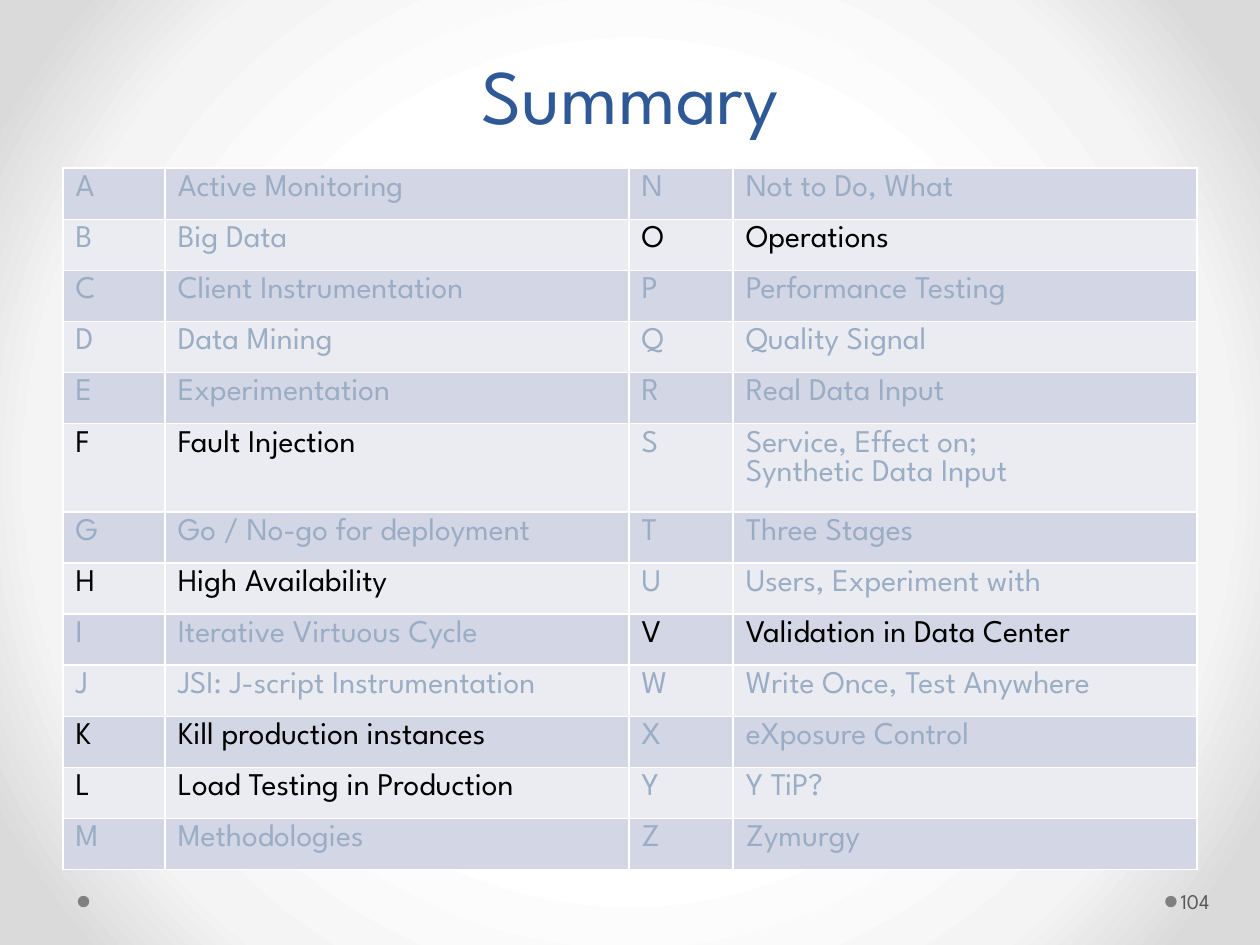
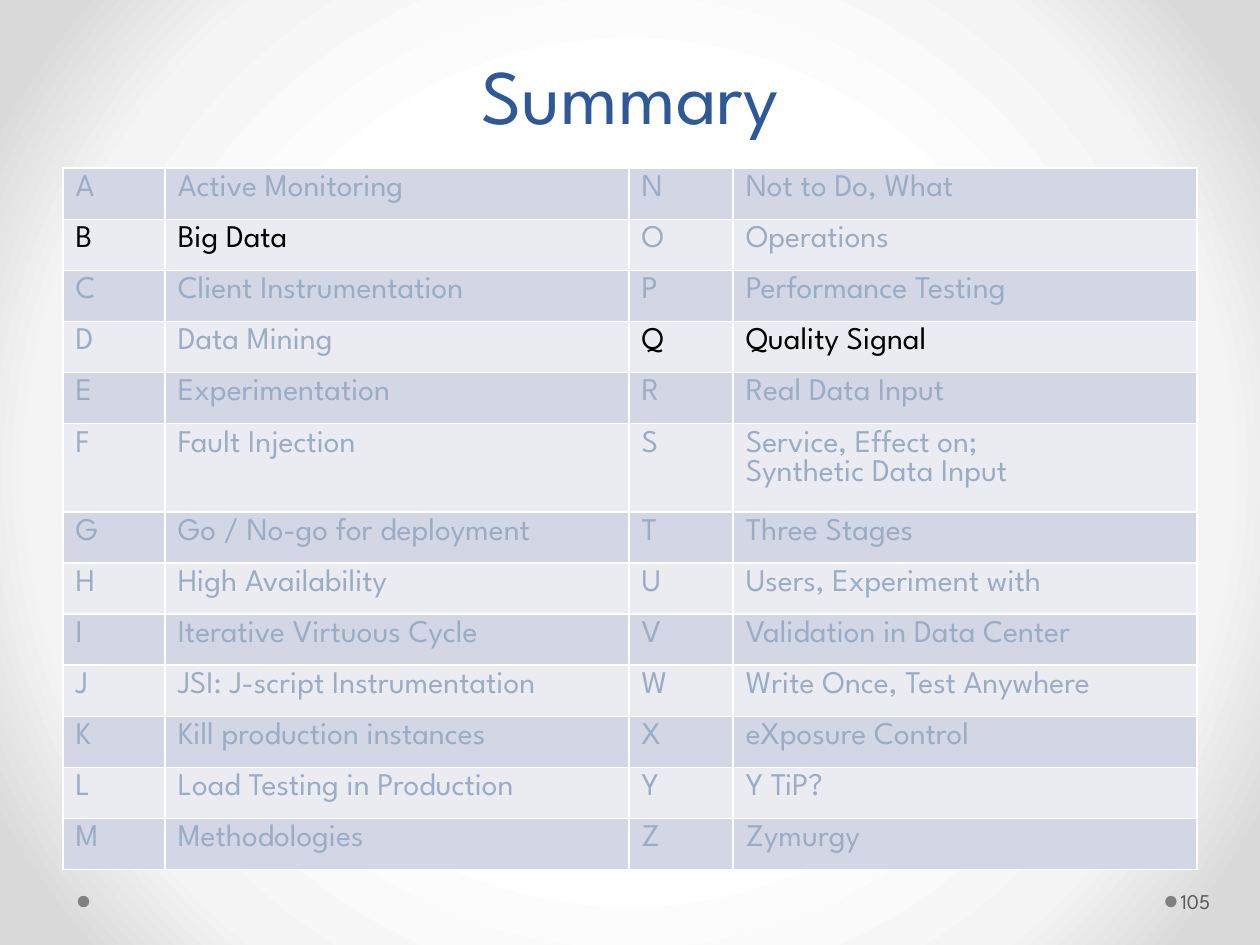
from lxml.etree import SubElement
from pptx import Presentation
from pptx.dml.color import RGBColor
from pptx.enum.shapes import MSO_SHAPE
from pptx.enum.text import MSO_ANCHOR, PP_ALIGN
from pptx.oxml import parse_xml
from pptx.oxml.ns import nsdecls, qn
from pptx.util import Cm, Pt

COLORS = {
    "title": "2F5897", "faded": "9BADC4", "active": "000000",
    "band_dark": "D2D6E5", "band_light": "EAECF2", "border": "FFFFFF",
    "dot": "808080", "number": "595959",
}
GLOW = [(50, "FFFFFF"), (76, "F4F4F4"), (92, "DADADA")]
FONT = "League Spartan"
TITLE = {"size": Pt(44), "name": FONT}
CELL = {"size": Pt(18), "name": FONT}
NUMBER = {"size": Pt(12), "name": FONT}

# Boxes in cm: left, top, width, height
TITLE_BOX = (1.27, 0.2, 22.86, 2.74)
TABLE_BOX = (1.27, 3.39, 22.86, 13.39)
FOOTER_BOX = (1.57, 17.65, 23.7, 1.02)
COLUMNS = (2.06, 9.35, 2.1, 9.35)
ROW_HEIGHT = 1.03

TOPICS = [
    "Active Monitoring", "Big Data", "Client Instrumentation", "Data Mining",
    "Experimentation", "Fault Injection", "Go / No-go for deployment",
    "High Availability", "Iterative Virtuous Cycle",
    "JSI: J-script Instrumentation", "Kill production instances",
    "Load Testing in Production", "Methodologies", "Not to Do, What",
    "Operations", "Performance Testing", "Quality Signal", "Real Data Input",
    "Service, Effect on;\nSynthetic Data Input", "Three Stages",
    "Users, Experiment with", "Validation in Data Center",
    "Write Once, Test Anywhere", "eXposure Control", "Y TiP?", "Zymurgy",
]
LETTERS = "ABCDEFGHIJKLMNOPQRSTUVWXYZ"
# Slide number and the letters highlighted on it
SLIDES = [(104, "FHKLOV"), (105, "BQ")]


def rgb(name):
    return RGBColor.from_string(COLORS[name])


def write(tf, text, style, color):
    for i, line in enumerate(text.split("\n")):
        p = tf.add_paragraph() if i else tf.paragraphs[0]
        r = p.add_run()
        r.text = line
        for key, value in style.items():
            setattr(r.font, key, value)
        r.font.color.rgb = rgb(color)


def add_text(s, box, text, style, color, anchor):
    tf = s.shapes.add_textbox(*map(Cm, box)).text_frame
    tf.word_wrap = True
    tf.vertical_anchor = anchor
    write(tf, text, style, color)
    return tf


def set_background(master):
    """Radial glow shared by every slide."""
    stops = "".join(f'<a:gs pos="{pos * 1000}"><a:srgbClr val="{color}"/></a:gs>'
                    for pos, color in GLOW)
    c_sld = master.element.find(qn("p:cSld"))
    for bg in c_sld.findall(qn("p:bg")):
        c_sld.remove(bg)
    c_sld.insert(0, parse_xml(
        f'<p:bg {nsdecls("p", "a")}><p:bgPr><a:gradFill rotWithShape="1">'
        f'<a:gsLst>{stops}</a:gsLst><a:path path="circle">'
        '<a:fillToRect l="50000" t="50000" r="50000" b="50000"/></a:path>'
        '</a:gradFill><a:effectLst/></p:bgPr></p:bg>'))


def add_title(s, box, text):
    tf = add_text(s, box, text, TITLE, "title", MSO_ANCHOR.BOTTOM)
    p = tf.paragraphs[0]
    p.alignment = PP_ALIGN.CENTER
    p.line_spacing = Pt(58)


def add_footer(s, box, number):
    left, top, width, height = box
    # Dots at both ends
    for x in (left, left + 21.92):
        dot = s.shapes.add_shape(MSO_SHAPE.OVAL, Cm(x), Cm(top + 0.41),
                                 Cm(0.23), Cm(0.23))
        dot.shadow.inherit = False
        dot.fill.solid()
        dot.fill.fore_color.rgb = rgb("dot")
        dot.line.fill.background()
    # Slide number
    tf = add_text(s, (left + width - 1.55, top, 1.55, height), str(number),
                  NUMBER, "number", MSO_ANCHOR.MIDDLE)
    tf.margin_left = Cm(0.08)


def style_cell(cell, band):
    tc_pr = cell._tc.get_or_add_tcPr()
    for side in ("lnL", "lnR", "lnT", "lnB"):
        line = SubElement(tc_pr, qn(f"a:{side}"), w=str(Pt(1)))
        fill = SubElement(line, qn("a:solidFill"))
        SubElement(fill, qn("a:srgbClr"), val=COLORS["border"])
    cell.fill.solid()
    cell.fill.fore_color.rgb = rgb(band)


def add_topic_table(s, box, active):
    count = len(TOPICS) // 2
    table = s.shapes.add_table(count, len(COLUMNS), *map(Cm, box)).table
    table.first_row = table.horz_banding = False
    for column, width in zip(table.columns, COLUMNS):
        column.width = Cm(width)
    for i, row in enumerate(table.rows):
        row.height = Cm(ROW_HEIGHT)
        entries = [(text, LETTERS[k]) for k in (i, i + count)
                   for text in (LETTERS[k], TOPICS[k])]
        for cell, (text, letter) in zip(row.cells, entries):
            style_cell(cell, "band_light" if i % 2 else "band_dark")
            write(cell.text_frame, text, CELL,
                  "active" if letter in active else "faded")


def add_summary_slide(prs, number, active):
    s = prs.slides.add_slide(prs.slide_layouts[6])
    add_title(s, TITLE_BOX, "Summary")
    add_topic_table(s, TABLE_BOX, active)
    add_footer(s, FOOTER_BOX, number)


def main():
    prs = Presentation()
    prs.slide_width, prs.slide_height = Cm(25.4), Cm(19.05)
    set_background(prs.slide_master)
    for number, active in SLIDES:
        add_summary_slide(prs, number, active)
    prs.save("out.pptx")


if __name__ == "__main__":
    main()
